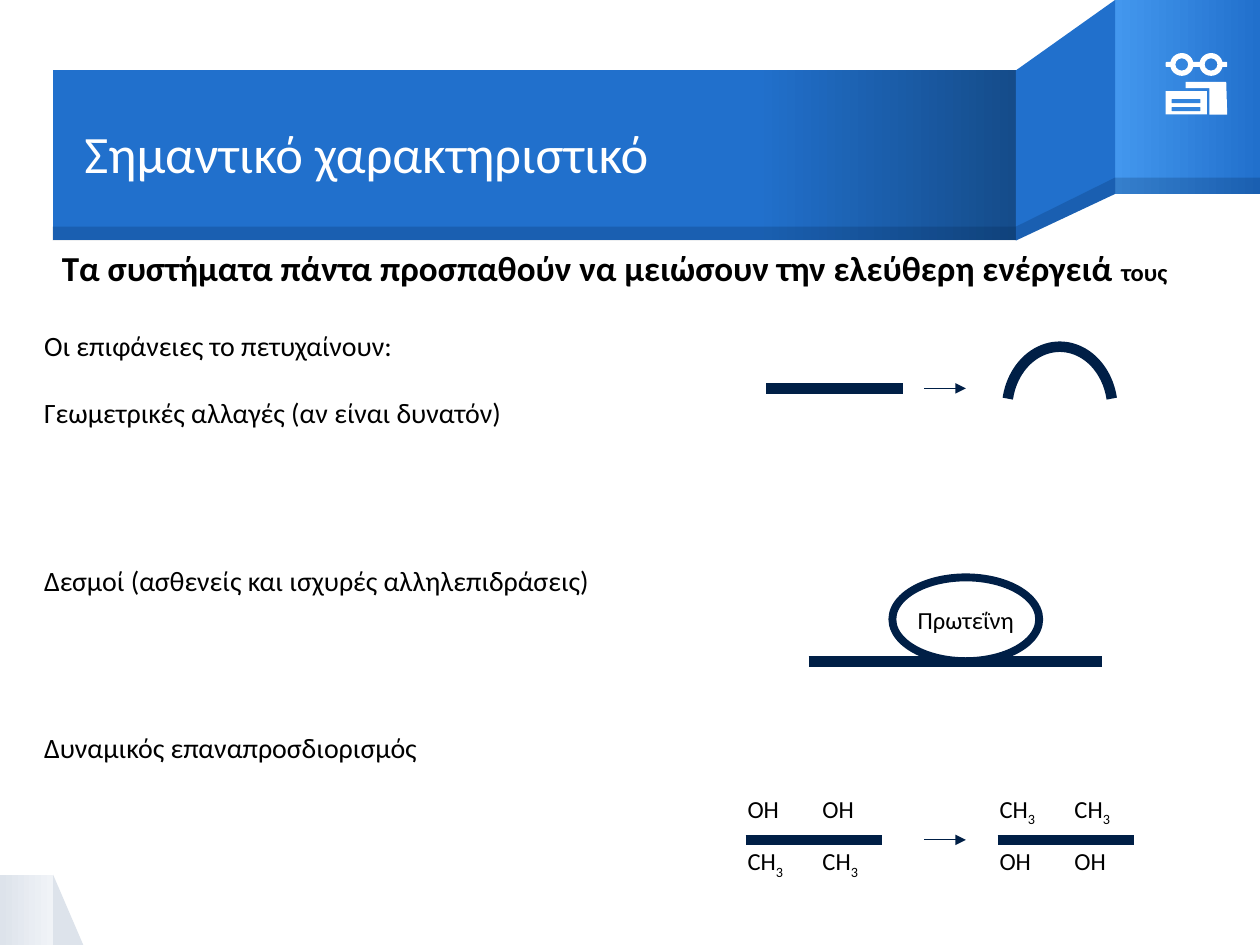
"""Build the slide on how surfaces lower their free energy."""
from dataclasses import dataclass

from lxml import etree
from pptx import Presentation
from pptx.dml.color import RGBColor
from pptx.enum.shapes import MSO_CONNECTOR, MSO_SHAPE
from pptx.enum.text import MSO_ANCHOR, PP_ALIGN
from pptx.oxml.ns import qn
from pptx.util import Cm, Pt

RECT, OVAL, ARC = MSO_SHAPE.RECTANGLE, MSO_SHAPE.OVAL, MSO_SHAPE.ARC
DONUT, TRIANGLE = MSO_SHAPE.DONUT, MSO_SHAPE.RIGHT_TRIANGLE
ROUNDED = MSO_SHAPE.ROUNDED_RECTANGLE
STRAIGHT = MSO_CONNECTOR.STRAIGHT
MIDDLE, CENTER, LEFT = MSO_ANCHOR.MIDDLE, PP_ALIGN.CENTER, PP_ALIGN.LEFT


@dataclass(frozen=True)
class Theme:
    font: str = "Calibri"
    navy: str = "001F46"
    blue: str = "2170CC"
    light_blue: str = "4397EE"
    mid_blue: str = "3284DD"
    deep_blue: str = "154C8A"
    grey: str = "DDE3EB"
    light_grey: str = "F0F3F7"
    white: str = "FFFFFF"
    black: str = "000000"
    title: int = 30
    heading: int = 20
    body: int = 16
    label: int = 14


T = Theme()


def paint(sp, *colors, start=0):
    """Fill a shape with one colour or a horizontal gradient, without line or shadow."""
    sp.shadow.inherit = False
    sp.line.fill.background()
    if len(colors) == 1:
        sp.fill.solid()
        sp.fill.fore_color.rgb = RGBColor.from_string(colors[0])
        return
    sp.fill.gradient()
    sp.fill.gradient_angle = 0
    for stop, color, position in zip(sp.fill.gradient_stops, colors, (start, 1)):
        stop.color.rgb = RGBColor.from_string(color)
        stop.position = position


def write(p, text, size, color=T.black, align=LEFT):
    """Add a run to a paragraph and set the paragraph's font."""
    r = p.add_run()
    r.text = text
    p.alignment = align
    p.font.name = T.font
    p.font.size = Pt(size)
    p.font.color.rgb = RGBColor.from_string(color)
    return r


prs = Presentation()
prs.slide_width, prs.slide_height = Cm(25.4), Cm(19.05)
s = prs.slides.add_slide(prs.slide_layouts[6])
shapes = s.shapes

for kind, box, colors, start in (
    (TRIANGLE, (1.07, 17.63, 0.61, 1.42), (T.grey,), 0),
    (RECT, (0, 17.63, 1.07, 1.42), (T.grey, T.light_grey), 0),
    (RECT, (22.48, 0, 2.92, 3.91), (T.light_blue, T.blue), 0),
    (RECT, (1.06, 1.42, 19.42, 3.43), (T.blue, T.deep_blue), 0.73),
):
    paint(shapes.add_shape(kind, *map(Cm, box)), *colors, start=start)

folds = []
for points, color in (
    (((22.48, 0), (20.48, 1.42), (20.48, 4.85), (22.48, 3.91)), T.blue),
    (((22.48, 3.58), (20.48, 4.57), (20.48, 4.85), (22.48, 3.91)), T.navy),
    (((24.72, 1.65), (23.9, 1.65), (23.9, 1.78), (24.38, 1.78), (24.38, 2.31), (24.74, 2.31)), T.white),
):
    corners = [(Cm(x), Cm(y)) for x, y in points]
    fb = shapes.build_freeform(*corners[0])
    fb.add_line_segments(corners[1:], close=True)
    sp = fb.convert_to_shape()
    paint(sp, color)
    folds.append(sp)

shades = [folds[1]]
for box in ((22.48, 3.58, 2.92, 0.33), (1.06, 4.57, 19.42, 0.28)):
    sp = shapes.add_shape(RECT, *map(Cm, box))
    paint(sp, T.navy)
    shades.append(sp)
for sp in shades:
    clr = sp._element.spPr.find(qn("a:solidFill"))[0]
    etree.SubElement(clr, qn("a:alpha")).set("val", "20000")

for kind, box, color in (
    (DONUT, (23.59, 1.07, 0.47, 0.46), T.white),
    (DONUT, (24.18, 1.07, 0.47, 0.46), T.white),
    (ROUNDED, (23.5, 1.25, 0.12, 0.1), T.white),
    (RECT, (24.04, 1.25, 0.16, 0.1), T.white),
    (ROUNDED, (24.62, 1.25, 0.12, 0.1), T.white),
    (RECT, (23.5, 1.84, 0.83, 0.47), T.white),
    (ROUNDED, (23.62, 2, 0.58, 0.08), T.mid_blue),
    (ROUNDED, (23.62, 2.16, 0.58, 0.08), T.mid_blue),
):
    sp = shapes.add_shape(kind, *map(Cm, box))
    paint(sp, color)
    if kind == DONUT:
        sp.adjustments[0] = 0.23

tf = shapes.add_textbox(Cm(1.7), Cm(1.45), Cm(18.77), Cm(3.4)).text_frame
tf.word_wrap = True
tf.vertical_anchor = MIDDLE
tf.margin_left = tf.margin_right = tf.margin_top = tf.margin_bottom = 0
write(tf.paragraphs[0], "Σημαντικό χαρακτηριστικό", T.title, T.white)
tf.paragraphs[0].line_spacing = 0.9

tf = shapes.add_textbox(Cm(0.64), Cm(4.85), Cm(23.5), Cm(11.46)).text_frame
tf.word_wrap = True
p = tf.paragraphs[0]
write(p, "Τα συστήματα πάντα προσπαθούν να μειώσουν την ελεύθερη ενέργειά ", T.heading, align=CENTER)
write(p, "τους", T.heading, align=CENTER).font.size = Pt(T.label)
p.font.bold = True
for text, gap in (
    ("Οι επιφάνειες το πετυχαίνουν:", 23),
    ("Γεωμετρικές αλλαγές (αν είναι δυνατόν)", 19),
    ("Δεσμοί (ασθενείς και ισχυρές αλληλεπιδράσεις)", 76.5),
    ("Δυναμικός επαναπροσδιορισμός", 76.5),
):
    p = tf.add_paragraph()
    write(p, text, T.body)
    p.space_before = Pt(gap)

for x1, x2, y, width in (
    (15.45, 18.2, 7.83, 6),
    (18.63, 19.47, 7.83, 0.75),
    (16.3, 22.22, 13.33, 6),
    (15.03, 17.78, 16.93, 6),
    (18.63, 19.47, 16.93, 0.75),
    (20.11, 22.86, 16.93, 6),
):
    line = shapes.add_connector(STRAIGHT, Cm(x1), Cm(y), Cm(x2), Cm(y))
    line.line.color.rgb = RGBColor.from_string(T.navy)
    line.line.width = Pt(width)
    if width < 1:
        etree.SubElement(line.line._get_or_add_ln(), qn("a:tailEnd")).set("type", "triangle")
    etree.SubElement(line._element.spPr, qn("a:effectLst"))

arc = shapes.add_shape(ARC, Cm(20.3), Cm(6.99), Cm(2.13), Cm(2.54))
arc.adjustments[0], arc.adjustments[1] = 192 * 0.6, 348 * 0.6
arc.shadow.inherit = False
arc.fill.background()
protein = shapes.add_shape(OVAL, Cm(17.99), Cm(11.64), Cm(2.96), Cm(1.69))
paint(protein, T.white)
for sp, width in ((arc, 6), (protein, 4.5)):
    sp.line.color.rgb = RGBColor.from_string(T.navy)
    sp.line.width = Pt(width)
tf = protein.text_frame
tf.word_wrap = False
tf.vertical_anchor = MIDDLE
write(tf.paragraphs[0], "Πρωτεΐνη", T.label, align=CENTER)

for left, groups in ((14.82, ("OH", "CH")), (19.9, ("CH", "OH"))):
    for top, group in zip((15.88, 16.94), groups):
        for x in (left, left + 1.51):
            tf = shapes.add_textbox(Cm(x), Cm(top), Cm(1.27), Cm(0.86)).text_frame
            tf.word_wrap = False
            p = tf.paragraphs[0]
            write(p, group, T.label)
            if group == "CH":
                r = write(p, "3", T.label)
                r._r.get_or_add_rPr().set("baseline", "-25000")

prs.save("out.pptx")
